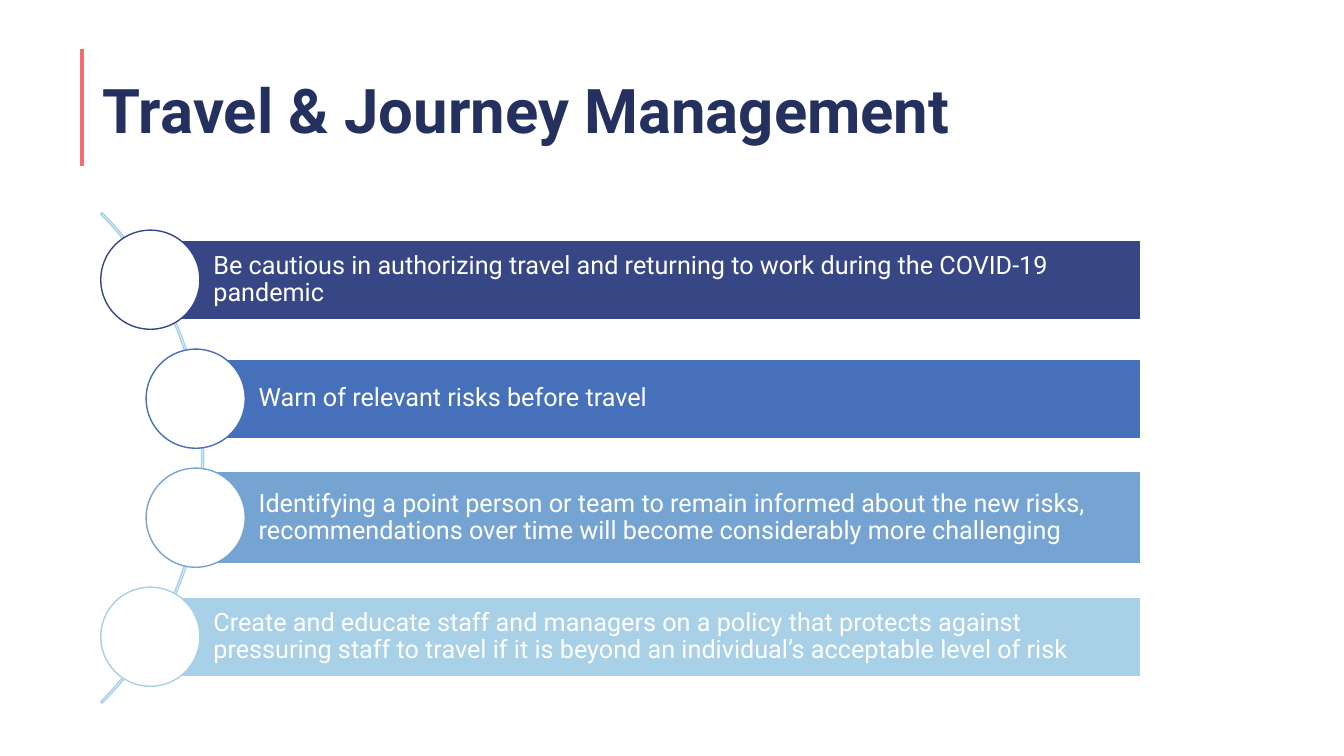
from dataclasses import dataclass

from lxml.etree import SubElement
from pptx import Presentation
from pptx.dml.color import RGBColor
from pptx.enum.shapes import MSO_CONNECTOR, MSO_SHAPE
from pptx.enum.text import MSO_ANCHOR, PP_ALIGN
from pptx.oxml.ns import qn
from pptx.util import Pt


@dataclass(frozen=True)
class Theme:
    font: str = "Roboto"
    title_size: int = 44
    body_size: int = 18
    title: str = "24305E"
    accent: str = "F76C6C"
    white: str = "FFFFFF"
    arc: str = "A8D0E6"


theme = Theme()


def add_outlined_shape(kind, left, top, width, height, fill, line):
    """Add a shadowless shape with a 1 pt line; a fill of None leaves it empty."""
    shape = page.shapes.add_shape(kind, Pt(left), Pt(top), Pt(width), Pt(height))
    shape.shadow.inherit = False
    if fill is None:
        shape.fill.background()
    else:
        shape.fill.solid()
        shape.fill.fore_color.rgb = RGBColor.from_string(fill)
    shape.line.color.rgb = RGBColor.from_string(line)
    shape.line.width = Pt(1)
    return shape


def write_text(shape, text, size, color, bold=False):
    frame = shape.text_frame
    frame.word_wrap = True
    frame.vertical_anchor = MSO_ANCHOR.MIDDLE
    para = frame.paragraphs[0]
    para.text = text
    para.alignment = PP_ALIGN.LEFT
    para.line_spacing = 0.9
    para.font.name = theme.font
    para.font.size = Pt(size)
    para.font.bold = bold
    para.font.color.rgb = RGBColor.from_string(color)


deck = Presentation()
deck.slide_width, deck.slide_height = Pt(960), Pt(540)
page = deck.slides.add_slide(deck.slide_layouts[6])

# Title with its accent rule
rule = page.shapes.add_connector(
    MSO_CONNECTOR.STRAIGHT, Pt(58.5), Pt(34.9), Pt(58.5), Pt(118.6))
rule.line.color.rgb = RGBColor.from_string(theme.accent)
rule.line.width = Pt(3)
SubElement(rule._element.spPr, qn("a:effectLst"))

title_box = page.shapes.add_textbox(Pt(66.3), Pt(28.75), Pt(828), Pt(104.4))
write_text(title_box, "Travel & Journey Management",
           theme.title_size, theme.title, bold=True)

# Arc that the circles sit on
arc = add_outlined_shape(
    MSO_SHAPE.BLOCK_ARC, -349.9, 79.4, 495.4, 495.4, None, theme.arc)
arc.adjustments[0] = 189
arc.adjustments[1] = 27
arc.adjustments[2] = 0.003

# Each step: circle centre x, bar height, colour, text
steps = [
    (107.4, 56.6, "374785",
     "Be cautious in authorizing travel and returning to work during the COVID-19 pandemic"),
    (139.8, 56.6, "4770BB",
     "Warn of relevant risks before travel"),
    (139.8, 66, "76A4D2",
     "Identifying a point person or team to remain informed about the new risks, "
     "recommendations over time will become considerably more challenging"),
    (107.4, 56.6, "A8D0E6",
     "Create and educate staff and managers on a policy that protects against "
     "pressuring staff to travel if it is beyond an individual’s acceptable level of risk"),
]
first_center, pitch = 199.8, 85
bar_right, diameter = 815, 70.8

for index, (center_x, bar_height, color, text) in enumerate(steps):
    center_y = first_center + index * pitch
    bar = add_outlined_shape(
        MSO_SHAPE.RECTANGLE, center_x, center_y - bar_height / 2,
        bar_right - center_x, bar_height, color, theme.white)
    frame = bar.text_frame
    frame.margin_left = Pt(45)
    frame.margin_top = frame.margin_right = frame.margin_bottom = Pt(3.6)
    write_text(bar, text, theme.body_size, theme.white)
    add_outlined_shape(
        MSO_SHAPE.OVAL, center_x - diameter / 2, center_y - diameter / 2,
        diameter, diameter, theme.white, color)

deck.save("out.pptx")
